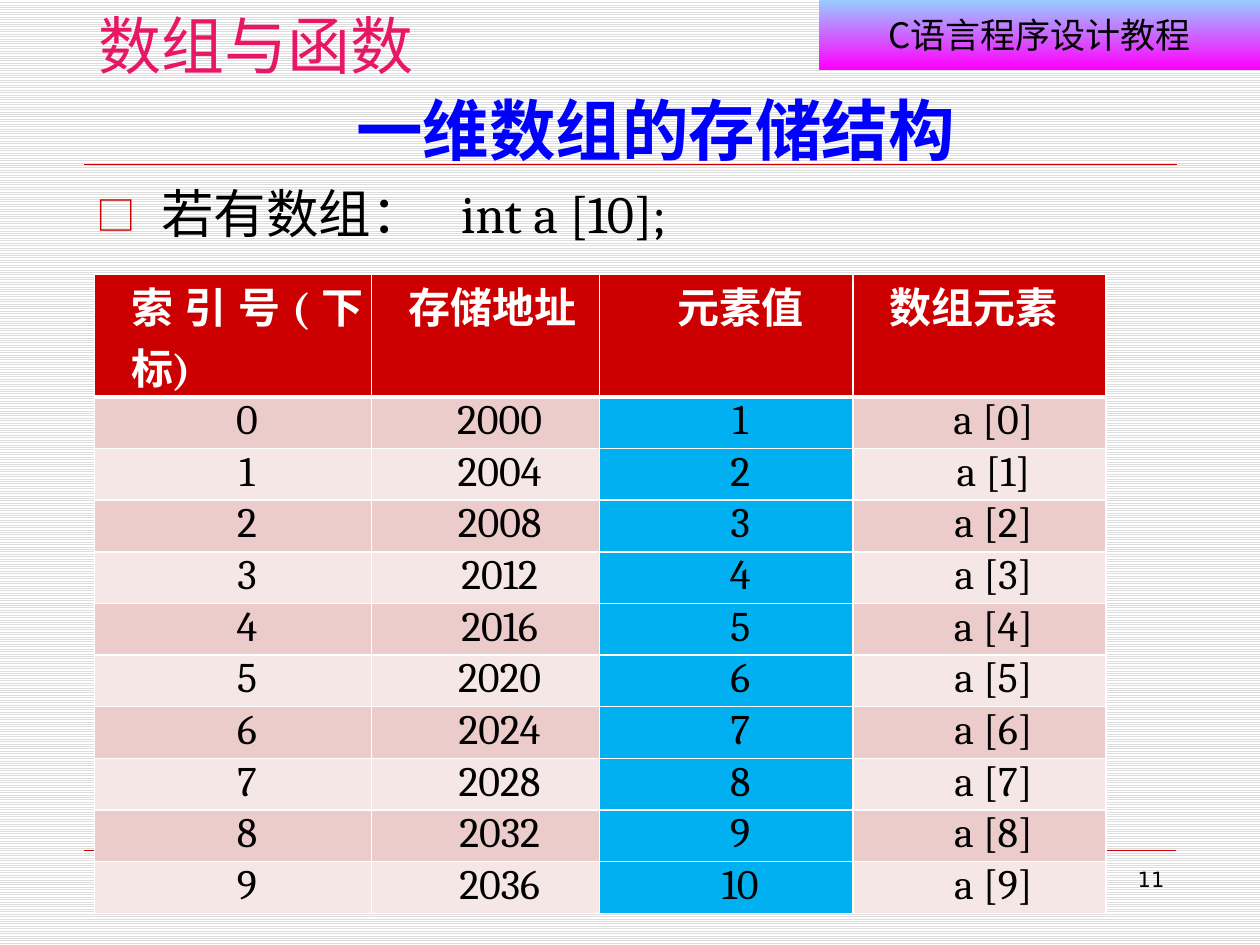
import pptx
import pptx.util
import pptx.dml.color
import pptx.enum.dml
import pptx.enum.shapes
import pptx.enum.text
import pptx.oxml
import pptx.oxml.ns
import lxml.etree

Inches = pptx.util.Inches
Pt = pptx.util.Pt
ALIGN = pptx.enum.text.PP_ALIGN
ANCHOR = pptx.enum.text.MSO_ANCHOR
CJK = "Noto Sans CJK SC"
HUES = {
    "red": "CC0000", "pink": "E81766", "blue": "0000FF", "cyan": "00B0F0",
    "dark": "ECCBCB", "light": "F6E7E7", "sky": "99CCFF", "mauve": "FF00FF",
    "gray": "DDDDDD", "white": "FFFFFF", "black": "000000",
}


def hue(name):
    return pptx.dml.color.RGBColor.from_string(HUES[name])


def add(parent, tag, **attrs):
    node = lxml.etree.SubElement(parent, pptx.oxml.ns.qn(tag))
    for key, value in attrs.items():
        node.set(key, str(value))
    return node


def style(para, size, color, face, bold=False, align=ALIGN.LEFT, east=CJK):
    para.alignment = align
    for run in para.runs:
        font = run.font
        font.size, font.bold, font.name = Pt(size), bold, face
        font.color.rgb = hue(color)
        add(run.font._element, "a:ea", typeface=east)


def label(slide, box, text, wrap=True, anchor=ANCHOR.TOP):
    frame = slide.shapes.add_textbox(*map(Inches, box)).text_frame
    frame.word_wrap = wrap
    frame.vertical_anchor = anchor
    frame.text = text
    return frame.paragraphs[0]


def rule(slide, left, top, width):
    line = slide.shapes.add_connector(
        pptx.enum.shapes.MSO_CONNECTOR.STRAIGHT,
        Inches(left), Inches(top), Inches(left + width), Inches(top))
    line.line.color.rgb = hue("red")
    line.line.width = Pt(0.25)
    add(line._element.spPr, "a:effectLst")


def banner(slide, box):
    shape = slide.shapes.add_shape(
        pptx.enum.shapes.MSO_SHAPE.RECTANGLE, *map(Inches, box))
    shape.shadow.inherit = False
    shape.line.fill.background()
    shape.fill.gradient()
    shape.fill.gradient_angle = 270
    for stop, name in zip(shape.fill.gradient_stops, ("sky", "mauve")):
        stop.color.rgb = hue(name)
    frame = shape.text_frame
    frame.vertical_anchor = ANCHOR.MIDDLE
    frame.text = "C语言程序设计教程"
    style(frame.paragraphs[0], 20, "black", CJK, align=ALIGN.CENTER)


def bullet(slide, box):
    para = label(slide, box, "若有数组：\tint a [10];")
    props = para._p.get_or_add_pPr()
    props.set("marL", str(Inches(0.51)))
    props.set("indent", str(-Inches(0.51)))
    add(add(props, "a:buClr"), "a:srgbClr", val=HUES["red"])
    add(props, "a:buSzPct", val=75000)
    add(props, "a:buFont", typeface=CJK)
    add(props, "a:buChar", char="□")
    add(add(props, "a:tabLst"), "a:tab", pos=Inches(2.89), algn="l")
    style(para, 30, "black", "Cambria")


def border(cell, top, bottom):
    props = cell._tc.get_or_add_tcPr()
    sides = (("a:lnL", 1), ("a:lnR", 1), ("a:lnT", top), ("a:lnB", bottom))
    for spot, (tag, width) in enumerate(sides):
        line = add(props, tag, w=Pt(width))
        add(add(line, "a:solidFill"), "a:srgbClr", val=HUES["white"])
        props.insert(spot, line)


def grid(slide, left, top, widths, tall, height):
    heads = ["索引号(下标)", "存储地址", "元素值", "数组元素"]
    rows = [heads] + [[str(i), str(2000 + 4 * i), str(i + 1), f"a [{i}]"]
                      for i in range(10)]
    table = slide.shapes.add_table(
        len(rows), len(widths), Inches(left), Inches(top),
        Inches(sum(widths)), Inches(tall + height * (len(rows) - 1))).table
    for col, width in zip(table.columns, widths):
        col.width = Inches(width)
    for r, row in enumerate(rows):
        head = r == 0
        table.rows[r].height = Inches(tall if head else height)
        for c, text in enumerate(row):
            cell = table.cell(r, c)
            cell.margin_left = cell.margin_right = Inches(0.07)
            cell.margin_top = cell.margin_bottom = 0
            cell.fill.solid()
            band = "dark" if r % 2 else "light"
            fill = "red" if head else "cyan" if c == 2 else band
            cell.fill.fore_color.rgb = hue(fill)
            border(cell, 3 if r == 1 else 1, 3 if head else 1)
            cell.text_frame.text = text
            para = cell.text_frame.paragraphs[0]
            props = para._p.get_or_add_pPr()
            props.set("marL", str(Inches(0.22)))
            props.set("indent", "0")
            style(para, 24, "white" if head else "black", "Cambria", head,
                  ALIGN.JUSTIFY if head and c != 2 else ALIGN.CENTER)


def main():
    deck = pptx.Presentation()
    deck.slide_width, deck.slide_height = Inches(10), Inches(7.5)
    slide = deck.slides.add_slide(deck.slide_layouts[6])

    # Striped background
    back = slide.background.fill
    back.patterned()
    back.pattern = pptx.enum.dml.MSO_PATTERN.LIGHT_HORIZONTAL
    back.fore_color.rgb, back.back_color.rgb = hue("gray"), hue("white")

    # Frame: rules, course banner and chapter name
    rule(slide, 0.67, 6.75, 8.66)
    banner(slide, (6.5, 0, 3.5, 0.55))
    style(label(slide, (0.2, 0, 3.66, 0.41), "数组与函数", wrap=False),
          36, "pink", "Noto Sans CJK JP", align=ALIGN.CENTER,
          east="Noto Sans CJK JP")
    rule(slide, 0.67, 1.3, 8.67)

    # Title, lead line and page number
    style(label(slide, (0.83, 0.65, 8.75, 0.74), "一维数组的存储结构",
                anchor=ANCHOR.BOTTOM),
          38, "blue", "DejaVu Sans", True, ALIGN.CENTER)
    bullet(slide, (0.67, 1.39, 8.75, 5.28))
    style(label(slide, (7.17, 6.83, 2.17, 0.52), "11"),
          12, "black", "DejaVu Sans", align=ALIGN.RIGHT)

    # Storage table, with a header row tall enough for two lines
    grid(slide, 0.75, 2.18, [2.2, 1.81, 2.01, 2.01], 0.97, 0.41)
    deck.save("out.pptx")


if __name__ == "__main__":
    main()
